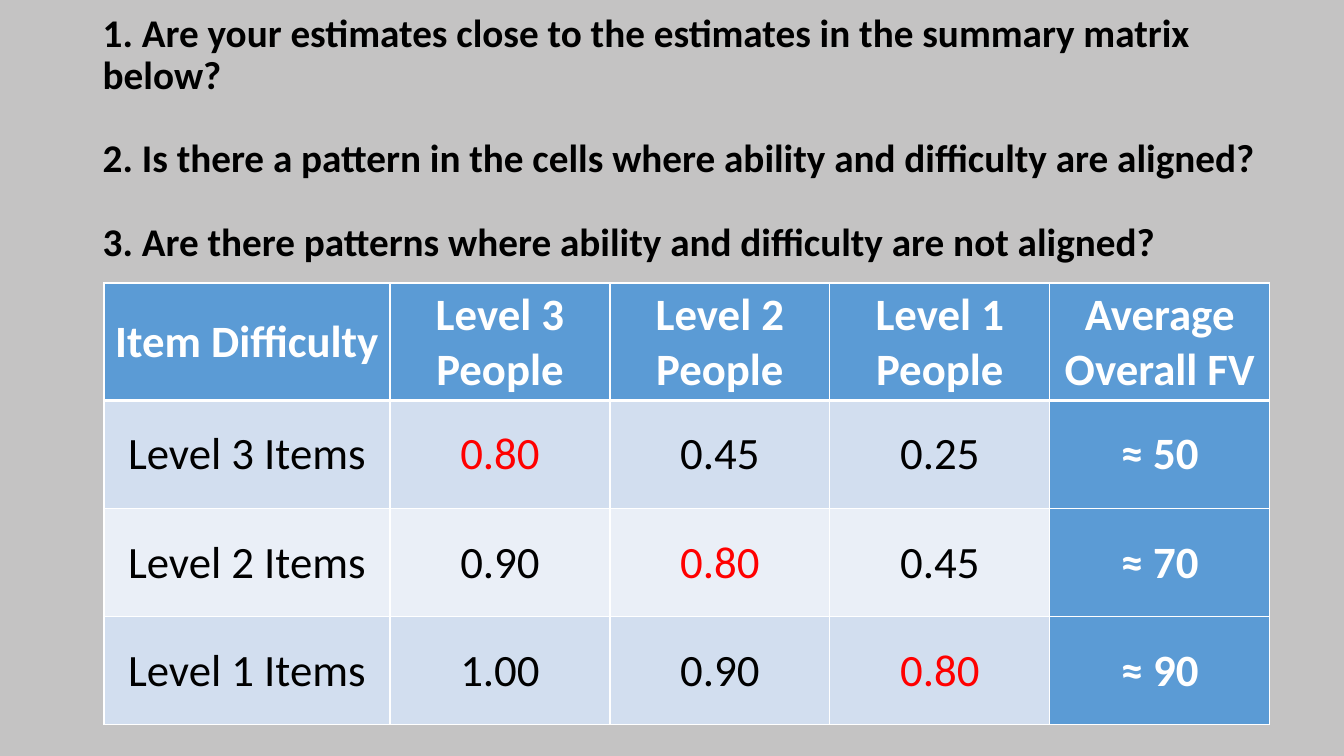
from lxml.etree import SubElement
from pptx import Presentation
from pptx.dml.color import RGBColor
from pptx.enum.text import MSO_ANCHOR as Anchor, PP_ALIGN as Align
from pptx.oxml.ns import qn
from pptx.util import Cm, Pt

COLORS = {
    "background": "C4C3C3",
    "accent": "5B9BD5",
    "odd_band": "D2DEEF",
    "even_band": "EAEFF7",
    "light": "FFFFFF",
    "dark": "000000",
    "aligned": "FF0000",
}
QUESTIONS = [
    "1. Are your estimates close to the estimates in the summary matrix below?",
    "2. Is there a pattern in the cells where ability and difficulty are aligned?",
    "3. Are there patterns where ability and difficulty are not aligned?",
]
MATRIX = [
    ["Item Difficulty", "Level 3 People", "Level 2 People", "Level 1 People", "Average Overall FV"],
    ["Level 3 Items", "0.80", "0.45", "0.25", "≈ 50"],
    ["Level 2 Items", "0.90", "0.80", "0.45", "≈ 70"],
    ["Level 1 Items", "1.00", "0.90", "0.80", "≈ 90"],
]


def paint(fill, color):
    """Fill an area with a named colour."""
    fill.solid()
    fill.fore_color.rgb = RGBColor.from_string(COLORS[color])


def write(paragraph, text, size=32, color="dark", bold=False, align=Align.LEFT, spacing=1.0, before=0):
    """Write formatted text into a paragraph."""
    paragraph.alignment = align
    paragraph.line_spacing = spacing
    paragraph.space_before = Pt(before)
    run = paragraph.add_run()
    run.text = text
    run.font.name = "Calibri"
    run.font.size = Pt(size)
    run.font.bold = bold
    run.font.color.rgb = RGBColor.from_string(COLORS[color])


def rule_cell(cell, **widths):
    """Draw white borders of the given point widths around a cell."""
    properties = cell._tc.get_or_add_tcPr()
    for side, width in widths.items():
        line = SubElement(properties, qn(f"a:ln{side}"), w=str(Pt(width)))
        SubElement(SubElement(line, qn("a:solidFill")), qn("a:srgbClr"), val=COLORS["light"])


def add_questions(slide, left, top, width, height):
    """Place the numbered questions, centred vertically in the box."""
    questions = slide.shapes.add_textbox(left, top, width, height).text_frame
    questions.word_wrap = True
    questions.vertical_anchor = Anchor.MIDDLE
    for index, question in enumerate(QUESTIONS):
        paragraph = questions.add_paragraph() if index else questions.paragraphs[0]
        write(paragraph, question, size=28, bold=True, spacing=0.88, before=30 if index else 0)


def add_matrix(slide, left, top, width, height):
    """Place the difficulty by ability matrix, filling the box."""
    last = len(MATRIX[0]) - 1
    matrix = slide.shapes.add_table(len(MATRIX), last + 1, left, top, width, height).table
    label_width, header_height = Cm(7.21), Cm(2.95)
    for index, column in enumerate(matrix.columns):
        column.width = (width - label_width) // last if index else label_width
    for index, row in enumerate(matrix.rows):
        row.height = (height - header_height) // (len(MATRIX) - 1) if index else header_height

    for r, values in enumerate(MATRIX):
        for c, value in enumerate(values):
            cell = matrix.cell(r, c)
            cell.vertical_anchor = Anchor.MIDDLE
            rule_cell(cell, L=1, R=1, T=3 if r == 1 else 1, B=1 if r else 3)
            heading = r == 0 or c == last
            paint(cell.fill, "accent" if heading else "odd_band" if r % 2 else "even_band")
            color = "light" if heading else "aligned" if r == c else "dark"
            write(cell.text_frame.paragraphs[0], value, color=color, bold=heading, align=Align.CENTER)


def main():
    """Build the slide and save it."""
    deck = Presentation()
    deck.slide_width, deck.slide_height = Cm(33.87), Cm(19.05)
    slide = deck.slides.add_slide(deck.slide_layouts[6])
    paint(slide.background.fill, "background")
    add_questions(slide, Cm(2.34), Cm(0.79), Cm(30.38), Cm(5.46))
    add_matrix(slide, Cm(2.62), Cm(7.13), Cm(29.38), Cm(11.12))
    deck.save("out.pptx")


if __name__ == "__main__":
    main()
